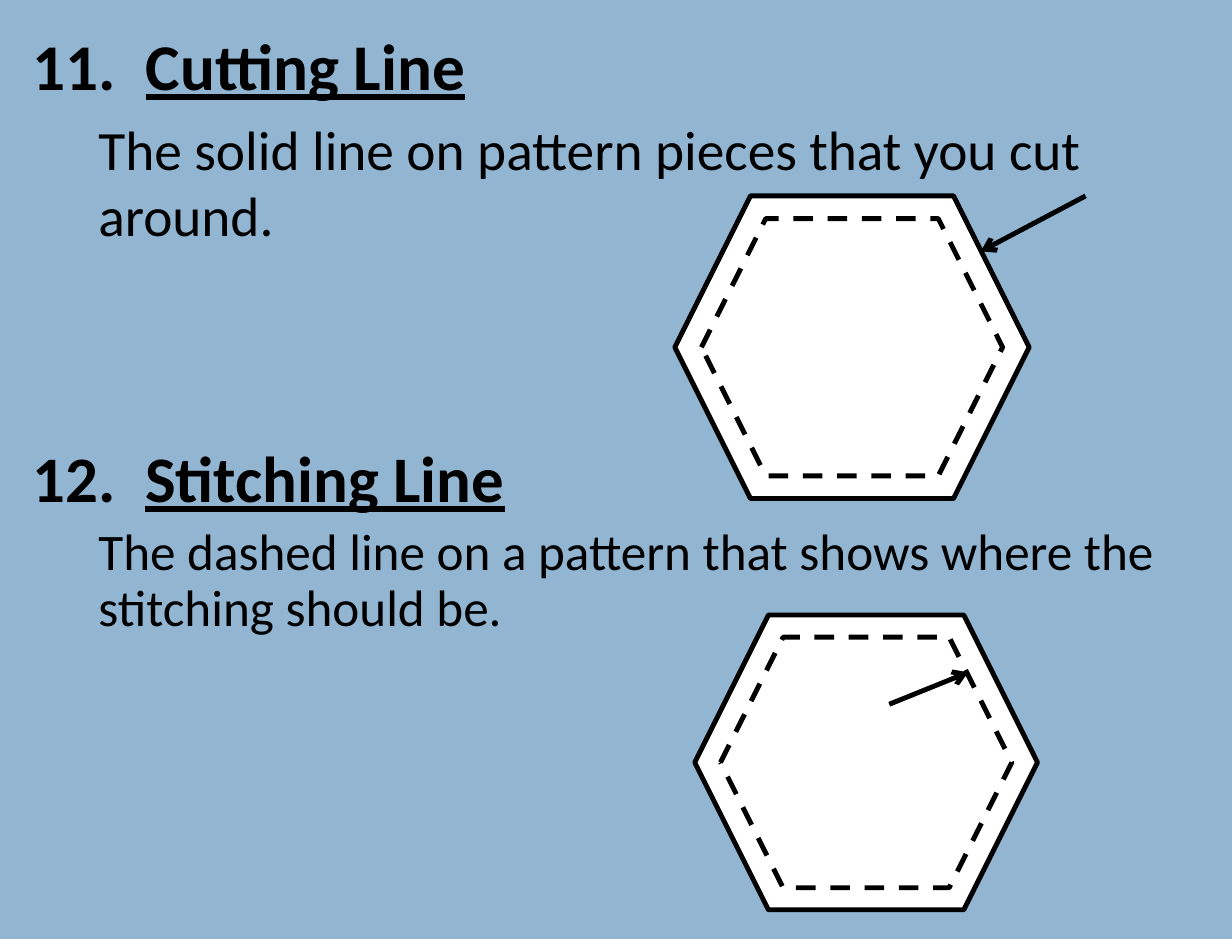
"""Build a slide that explains the cutting line and the stitching line of a pattern."""
import lxml.etree
import pptx
import pptx.dml.color
import pptx.enum.dml
import pptx.enum.shapes
import pptx.oxml.ns
import pptx.util

Cm, Pt, qn = pptx.util.Cm, pptx.util.Pt, pptx.oxml.ns.qn
INNER_SCALE = 0.85


def rgb(value):
    return pptx.dml.color.RGBColor.from_string(value)


def add_hexagon(s, left, top, width, height):
    sp = s.shapes.add_shape(pptx.enum.shapes.MSO_SHAPE.HEXAGON, Cm(left), Cm(top), Cm(width), Cm(height))
    sp.shadow.inherit = False
    sp.fill.solid()
    sp.fill.fore_color.rgb = rgb("FFFFFF")
    sp.line.color.rgb = rgb("000000")
    sp.line.width = Pt(3)
    return sp


prs = pptx.Presentation()
prs.slide_width, prs.slide_height = Cm(26.67), Cm(20.32)
s = prs.slides.add_slide(prs.slide_layouts[6])
s.background.fill.solid()
s.background.fill.fore_color.rgb = rgb("92B5D2")

sections = [
    ("11.  ", "Cutting Line", "The solid line on pattern pieces that you cut around.",
     40, 34, 1.0, (0.43, 7.42), (14.61, 4.24, 7.67, 6.55), (23.5, 4.24, 21.23, 5.44)),
    ("12.  ", "Stitching Line", "The dashed line on a pattern that shows where the stitching should be.",
     39.8, 31.4, 0.9, (9.53, 4.45), (15.04, 13.31, 7.42, 6.38), (19.25, 15.24, 20.96, 14.55)),
]

for number, term, meaning, term_size, meaning_size, spacing, (top, height), outline, arrow in sections:
    tf = s.shapes.add_textbox(Cm(0.43), Cm(top), Cm(25.83), Cm(height)).text_frame
    tf.word_wrap = True
    tf.margin_left = tf.margin_right = Cm(0.28)
    heading, body = tf.paragraphs[0], tf.add_paragraph()
    heading.add_run().text = number
    r = heading.add_run()
    r.text = term
    r.font.underline = True
    body.add_run().text = meaning
    for p, size, bold, indent in ((heading, term_size, True, -1.42), (body, meaning_size, False, 0)):
        p.line_spacing = spacing
        pPr = p._p.get_or_add_pPr()
        pPr.set("marL", str(Cm(1.42)))
        pPr.set("indent", str(Cm(indent)))
        before = lxml.etree.SubElement(pPr, qn("a:spcBef"))
        lxml.etree.SubElement(before, qn("a:spcPct"), val="20000")
        p.font.name = "Calibri"
        p.font.size = Pt(size)
        p.font.bold = bold
        p.font.color.rgb = rgb("000000")

    add_hexagon(s, *outline)
    x, y, w, h = outline
    inset = (1 - INNER_SCALE) / 2
    stitching = add_hexagon(s, x + w * inset, y + h * inset, w * INNER_SCALE, h * INNER_SCALE)
    stitching.line.dash_style = pptx.enum.dml.MSO_LINE.DASH

    line = s.shapes.add_connector(pptx.enum.shapes.MSO_CONNECTOR.STRAIGHT, *map(Cm, arrow))
    line.line.color.rgb = rgb("000000")
    line.line.width = Pt(3)
    lxml.etree.SubElement(line.line._get_or_add_ln(), qn("a:tailEnd"), type="arrow")
    lxml.etree.SubElement(line._element.spPr, qn("a:effectLst"))

prs.save("out.pptx")
